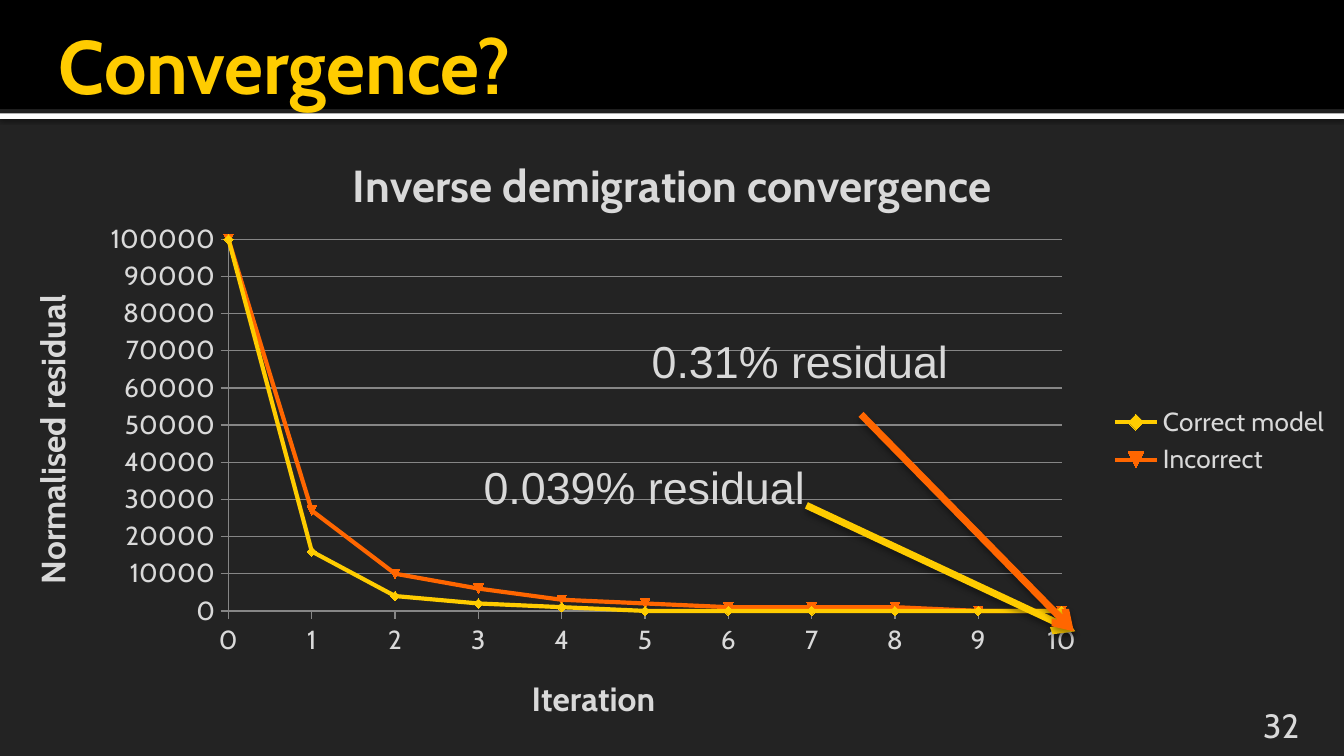
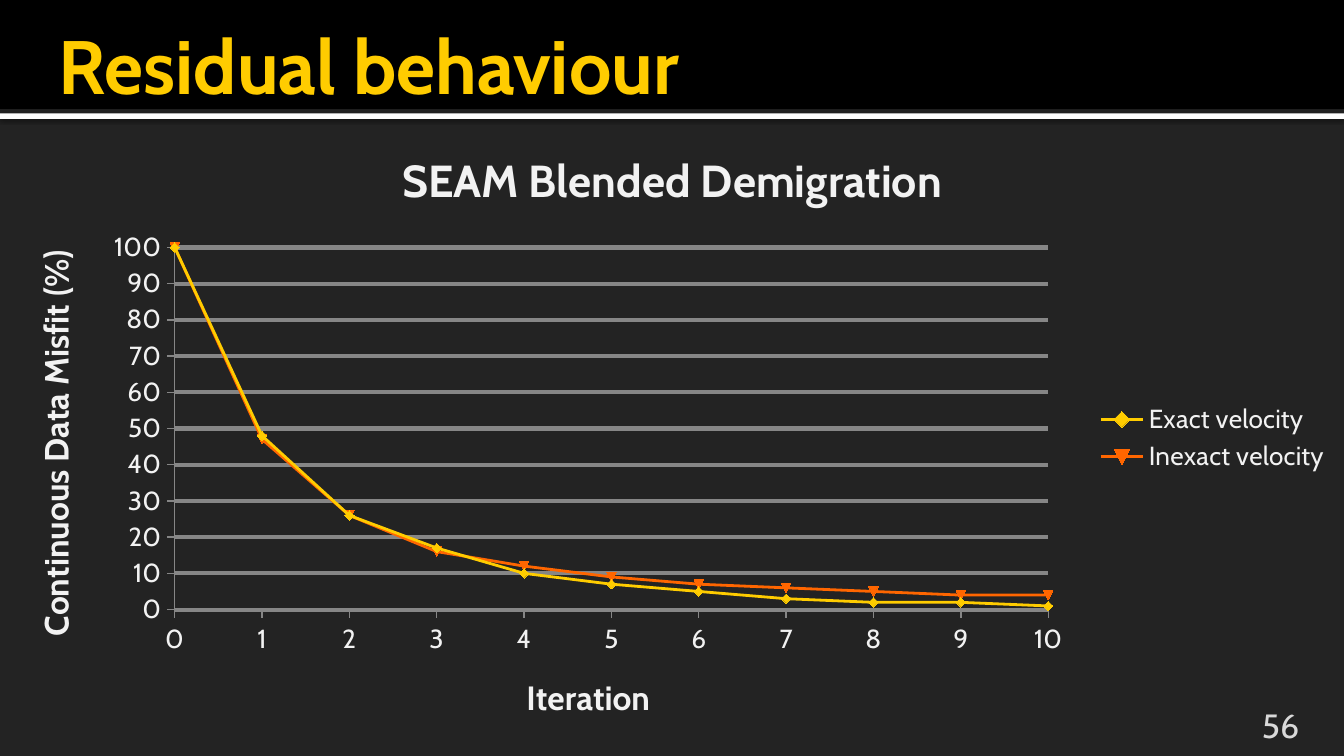
"""Build two slides that show how inversion residuals fall with iteration."""
from lxml.etree import SubElement
from pptx import Presentation
from pptx.chart.data import XyChartData
from pptx.dml.color import RGBColor
from pptx.enum.chart import XL_CHART_TYPE, XL_LEGEND_POSITION, XL_MARKER_STYLE, XL_TICK_MARK
from pptx.enum.shapes import MSO_CONNECTOR, MSO_SHAPE
from pptx.enum.text import MSO_ANCHOR, MSO_AUTO_SIZE, PP_ALIGN
from pptx.oxml.ns import qn
from pptx.util import Pt

PX = 9525
THEME = {
    "font": "Cabin", "note_font": "Arial",
    "bg": "232323", "black": "000000", "white": "FFFFFF",
    "yellow": "FFCC00", "orange": "FF6600",
    "text": "D9D9D9", "bright": "F2F2F2", "grid": "868686",
    "title": 40.5, "heading": 24, "label": 18, "tick": 14, "base": 10,
}
SLIDES = [
    {
        "title": "Convergence?", "title_w": 912, "number": "32",
        "type": XL_CHART_TYPE.XY_SCATTER_LINES, "box": (0, 90, 960, 450),
        "plot": {"x": 0.17, "y": 0.18, "w": 0.62, "h": 0.59},
        "heading": "Inverse demigration convergence", "y_title": "Normalised residual",
        "color": "text", "top": 100000, "line": 2.25, "grid": 0.75, "smooth": False,
        "series": {
            "Correct model": (100000, 16000, 4000, 2000, 1000, 0, 0, 0, 0, 0, 0),
            "Incorrect": (100000, 27000, 10000, 6000, 3000, 2000, 1000, 1000, 1000, 0, 0),
        },
        "notes": [
            ("0.039% residual", (336, 324, 252, 48), "yellow", (576, 361, 768, 451)),
            ("0.31% residual", (456, 234, 233, 48), "orange", (615, 296, 767, 451)),
        ],
    },
    {
        "title": "Residual behaviour", "title_w": 864, "number": "56",
        "type": XL_CHART_TYPE.XY_SCATTER_SMOOTH, "box": (0, 86, 960, 454),
        "plot": {"x": 0.13, "y": 0.2, "w": 0.65, "h": 0.57},
        "heading": "SEAM Blended Demigration", "y_title": "Continuous Data Misfit (%)",
        "color": "bright", "top": 100, "line": 1.5, "grid": 2.25, "smooth": True,
        "series": {
            "Exact velocity": (100, 48, 26, 17, 10, 7, 5, 3, 2, 2, 1),
            "Inexact velocity": (100, 47, 26, 16, 12, 9, 7, 6, 5, 4, 4),
        },
        "notes": [],
    },
]


def style(font, size, color, **extra):
    values = {"name": THEME["font"], "size": Pt(THEME[size]), "bold": False, **extra}
    for key, value in values.items():
        setattr(font, key, value)
    font.color.rgb = RGBColor.from_string(THEME[color])


def add_shadow(sp, alpha, blur, dist):
    effects = SubElement(sp._element.spPr, qn("a:effectLst"))
    shadow = SubElement(effects, qn("a:outerShdw"), blurRad=str(Pt(blur)),
                        dist=str(Pt(dist)), dir="5400000", rotWithShape="0")
    clr = SubElement(shadow, qn("a:srgbClr"), val=THEME["black"])
    SubElement(clr, qn("a:alpha"), val=str(alpha * 1000))


prs = Presentation()
prs.slide_width, prs.slide_height = 960 * PX, 540 * PX
bg = prs.slide_master.background.fill
bg.solid()
bg.fore_color.rgb = RGBColor.from_string(THEME["bg"])

for data in SLIDES:
    s = prs.slides.add_slide(prs.slide_layouts[5])
    bands = [((0, 81, 960, 4), "white"), ((0, 0, 960, 78), "black")]
    for i, (box, color) in enumerate(bands):
        sp = s.shapes.add_shape(MSO_SHAPE.RECTANGLE, *(v * PX for v in box))
        sp.fill.solid()
        sp.fill.fore_color.rgb = RGBColor.from_string(THEME[color])
        sp.line.fill.background()
        if color == "white":
            add_shadow(sp, 60, 2.5, 0.8)
        else:
            sp.shadow.inherit = False
        s.shapes._spTree.insert(2 + i, sp._element)

    title = s.shapes.title
    number = s.shapes.add_textbox(0, 0, PX, PX)
    texts = [
        (title, data["title"], (32, 7, data["title_w"], 78), (10, 5, 5, 5),
         MSO_ANCHOR.MIDDLE, PP_ALIGN.LEFT, ("title", "yellow", True)),
        (number, data["number"], (861, 510, 77, 22), (10, 5, 10, 0),
         MSO_ANCHOR.BOTTOM, PP_ALIGN.RIGHT, ("label", "text", False)),
    ]
    for sp, text, box, insets, anchor, align, (size, color, bold) in texts:
        for name, value in zip(("left", "top", "width", "height"), box):
            setattr(sp, name, value * PX)
        tf = sp.text_frame
        for side, value in zip(("left", "top", "right", "bottom"), insets):
            setattr(tf, f"margin_{side}", value * PX)
        tf.word_wrap, tf.auto_size, tf.vertical_anchor = True, MSO_AUTO_SIZE.NONE, anchor
        p = tf.paragraphs[0]
        p.alignment = align
        r = p.add_run()
        r.text = text
        style(r.font, size, color, bold=bold)

    chart_data = XyChartData()
    for name, values in data["series"].items():
        series = chart_data.add_series(name)
        for x, y in enumerate(values):
            series.add_data_point(x, y)
    chart = s.shapes.add_chart(data["type"], *(v * PX for v in data["box"]), chart_data).chart
    color = data["color"]
    style(chart.font, "base", "black")
    chart.has_title = chart.has_legend = True
    chart.legend.position = XL_LEGEND_POSITION.RIGHT
    chart.legend.include_in_layout = False
    style(chart.legend.font, "tick", color)

    x_axis, y_axis = chart.category_axis, chart.value_axis
    headings = [(chart.chart_title, data["heading"], "heading"),
                (x_axis.axis_title, "Iteration", "label"),
                (y_axis.axis_title, data["y_title"], "label")]
    for holder, text, size in headings:
        r = holder.text_frame.paragraphs[0].add_run()
        r.text = text
        style(r.font, size, color, bold=True)
    y_axis.axis_title.text_frame._txBody.bodyPr.set("rot", "-5400000")

    for axis, top, grid in ((x_axis, 10, False), (y_axis, data["top"], True)):
        values = {"minimum_scale": 0, "maximum_scale": top, "major_unit": top // 10,
                  "has_major_gridlines": grid, "major_tick_mark": XL_TICK_MARK.OUTSIDE,
                  "minor_tick_mark": XL_TICK_MARK.NONE}
        for key, value in values.items():
            setattr(axis, key, value)
        style(axis.tick_labels.font, "tick", color)
        lines = [(axis.format.line, 0.75)]
        if grid:
            lines.append((axis.major_gridlines.format.line, data["grid"]))
        for line, width in lines:
            line.color.rgb = RGBColor.from_string(THEME["grid"])
            line.width = Pt(width)

    for series, name in zip(chart.plots[0].series, ("yellow", "orange")):
        rgb = RGBColor.from_string(THEME[name])
        series.smooth = data["smooth"]
        series.format.line.color.rgb = rgb
        series.format.line.width = Pt(data["line"])
        marker = series.marker
        marker.style, marker.size = XL_MARKER_STYLE.AUTOMATIC, 5
        marker.format.fill.solid()
        marker.format.fill.fore_color.rgb = rgb
        marker.format.line.color.rgb = rgb

    plot_area = chart._chartSpace.chart.plotArea
    for old in plot_area.findall(qn("c:layout")):
        plot_area.remove(old)
    layout = SubElement(plot_area, qn("c:layout"))
    plot_area.insert(0, layout)
    manual = SubElement(layout, qn("c:manualLayout"))
    settings = {"layoutTarget": "inner", "xMode": "edge", "yMode": "edge", **data["plot"]}
    for key, value in settings.items():
        SubElement(manual, qn(f"c:{key}"), val=str(value))

    for text, box, color, ends in data["notes"]:
        tf = s.shapes.add_textbox(*(v * PX for v in box)).text_frame
        tf.word_wrap, tf.auto_size = False, MSO_AUTO_SIZE.SHAPE_TO_FIT_TEXT
        r = tf.paragraphs[0].add_run()
        r.text = text
        style(r.font, "heading", "text", name=THEME["note_font"])
        arrow = s.shapes.add_connector(MSO_CONNECTOR.STRAIGHT, *(v * PX for v in ends))
        arrow.line.color.rgb = RGBColor.from_string(THEME[color])
        arrow.line.width = Pt(3.78)
        SubElement(arrow.line._get_or_add_ln(), qn("a:tailEnd"), type="arrow")
        add_shadow(arrow, 38, 3.5, 2)

prs.save("out.pptx")
